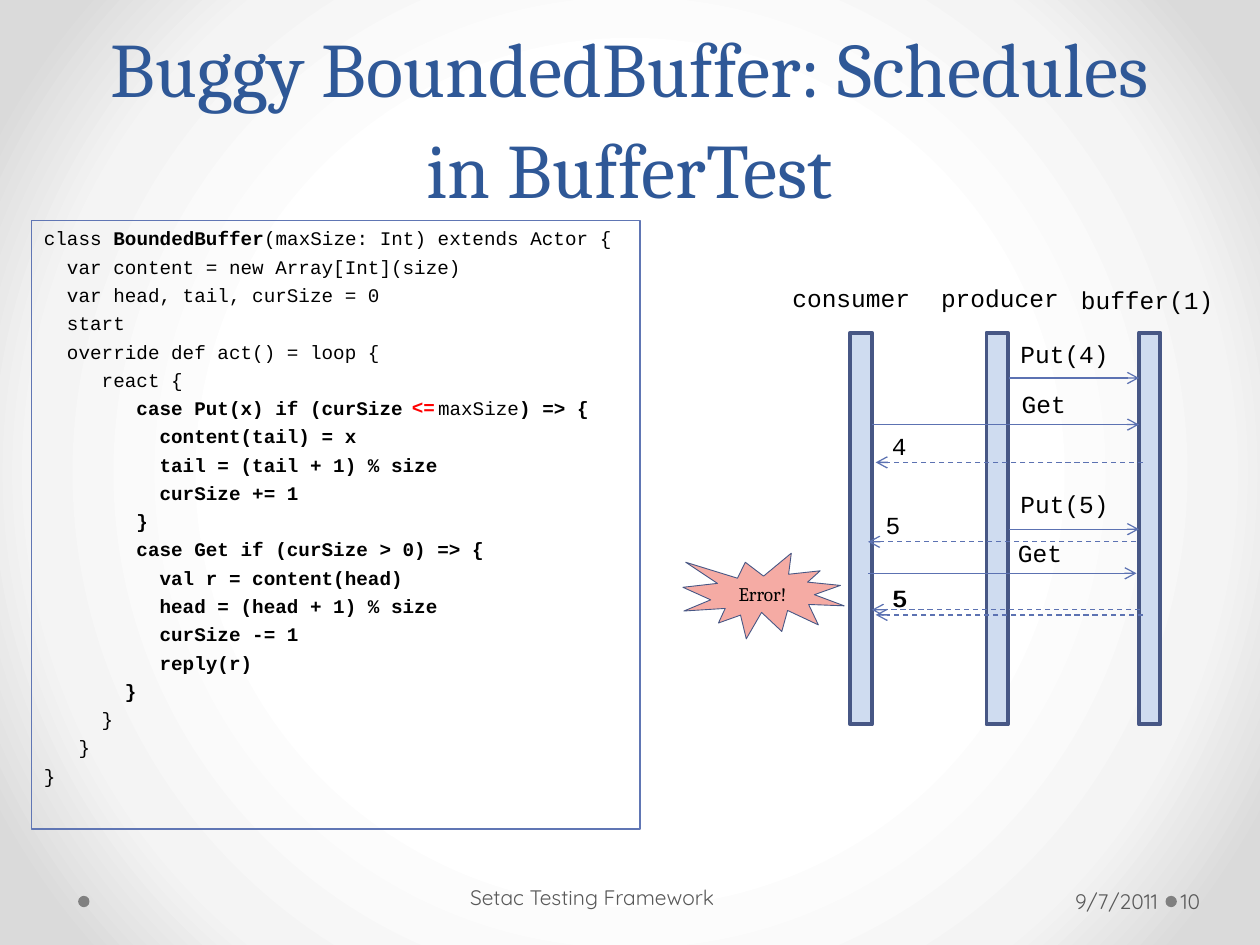
from dataclasses import dataclass

from lxml import etree
from pptx import Presentation
from pptx import util as u
from pptx.dml.color import RGBColor
from pptx.enum import dml, shapes, text
from pptx.oxml import parse_xml
from pptx.oxml.ns import nsdecls, qn

EMU_PER_PX = 9144  # 100 px to the inch


@dataclass(frozen=True)
class Theme:
    serif: str = "Cambria"
    mono: str = "Courier New"
    sans: str = "Quicksand"
    title: str = "2F5897"
    ink: str = "000000"
    alert: str = "FF0000"
    muted: str = "595959"
    dot: str = "808080"
    frame: str = "6076B4"
    bar: str = "CFDCF0"
    edge: str = "475785"
    arrow: str = "5C72B2"
    burst: str = "EF796D"
    backdrop: tuple = ((50, "FFFFFF"), (76, "F4F4F4"), (92, "DADADA"))
    title_pt: int = 44
    label_pt: int = 14
    footer_pt: int = 12
    code_pt: int = 11


THEME = Theme()

# A backtick switches bold on or off, across lines too
CODE = """class `BoundedBuffer`(maxSize: Int) extends Actor {
  var content = new Array[Int](size)
  var head, tail, curSize = 0
  start
  override def act() = loop {
     react {
`        case Put(x) if (curSize   `maxSize`) => {
          content(tail) = x
          tail = (tail + 1) % size
          curSize += 1
        }
        case Get if (curSize > 0) => {
          val r = content(head)
          head = (head + 1) % size
          curSize -= 1
          reply(r)
       }`
     }
   }
}"""


def px(n):
    return u.Emu(n * EMU_PER_PX)


def rgb(color):
    return RGBColor.from_string(color)


def write(sp, content, *, font=THEME.mono, size=THEME.label_pt, color=THEME.ink,
          align="LEFT", anchor="TOP", insets=(10, 5, 10, 5), before=0, leading=None):
    """Fill a shape with text, one paragraph a line."""
    tf = sp.text_frame
    tf.word_wrap = True
    tf.auto_size = text.MSO_AUTO_SIZE.NONE
    tf.vertical_anchor = text.MSO_ANCHOR[anchor]
    tf.margin_left, tf.margin_top, tf.margin_right, tf.margin_bottom = map(px, insets)
    bold = False
    for i, line in enumerate(content.split("\n")):
        p = tf.add_paragraph() if i else tf.paragraphs[0]
        p.alignment = text.PP_ALIGN[align]
        if i and before:
            p.space_before = u.Pt(before)
        if leading:
            p.line_spacing = u.Pt(leading)
        for j, part in enumerate(line.split("`")):
            if j:
                bold = not bold
            if part:
                r = p.add_run()
                r.text = part
                r.font.name, r.font.size, r.font.bold = font, u.Pt(size), bold
                r.font.color.rgb = rgb(color)


class Deck:
    def __init__(self, theme, width, height):
        self.theme = theme
        self.prs = Presentation()
        self.prs.slide_width, self.prs.slide_height = px(width), px(height)
        self.s = None

    def new_slide(self):
        self.s = self.prs.slides.add_slide(self.prs.slide_layouts[5])

    def background(self):
        """Radial gradient from the centre outwards."""
        self.s.background.fill.solid()
        stops = "".join(f'<a:gs pos="{pos * 1000}"><a:srgbClr val="{color}"/></a:gs>'
                        for pos, color in self.theme.backdrop)
        solid = next(self.s._element.iter(qn("a:solidFill")))
        solid.getparent().replace(solid, parse_xml(
            f'<a:gradFill {nsdecls("a")} rotWithShape="1"><a:gsLst>{stops}</a:gsLst>'
            '<a:path path="circle"><a:fillToRect l="50000" t="50000" r="50000" b="50000"/>'
            '</a:path></a:gradFill>'))

    def title(self, content, x, y, w, h):
        sp = self.s.shapes.title
        sp.left, sp.top, sp.width, sp.height = map(px, (x, y, w, h))
        write(sp, content, font=self.theme.serif, size=self.theme.title_pt,
              color=self.theme.title, align="CENTER", anchor="BOTTOM", leading=58)

    def label(self, content, x, y, w=128, h=34, **style):
        sp = self.s.shapes.add_textbox(*map(px, (x, y, w, h)))
        write(sp, content, **style)
        return sp

    def shape(self, kind, x, y, w, h, fill, edge=None, weight=1.0, opacity=None):
        sp = self.s.shapes.add_shape(shapes.MSO_SHAPE[kind], *map(px, (x, y, w, h)))
        sp.shadow.inherit = False
        sp.fill.solid()
        sp.fill.fore_color.rgb = rgb(fill)
        if opacity:
            clr = sp._element.spPr.find(qn("a:solidFill"))[0]
            etree.SubElement(clr, qn("a:alpha"), val=str(opacity * 1000))
        if edge:
            sp.line.color.rgb = rgb(edge)
            sp.line.width = u.Pt(weight)
        else:
            sp.line.fill.background()
        return sp

    def arrow(self, x1, x2, y, dashed=False):
        c = self.s.shapes.add_connector(shapes.MSO_CONNECTOR.STRAIGHT,
                                        *map(px, (x1, y, x2, y)))
        c.line.color.rgb = rgb(self.theme.arrow)
        c.line.width = u.Pt(0.75)
        if dashed:
            c.line.dash_style = dml.MSO_LINE.DASH
        etree.SubElement(c.line._get_or_add_ln(), qn("a:tailEnd"), type="arrow")
        etree.SubElement(c._element.spPr, qn("a:effectLst"))

    def footer(self, content, x, y, w, align, insets):
        self.label(content, x, y, w, 40, font=self.theme.sans,
                   size=self.theme.footer_pt, color=self.theme.muted,
                   align=align, anchor="MIDDLE", insets=insets)


def main():
    t = THEME
    deck = Deck(t, 1000, 750)
    deck.new_slide()
    deck.background()
    deck.title("Buggy BoundedBuffer: Schedules in BufferTest", 50, 0, 900, 175)

    # Code listing with the faulty operator marked
    listing = deck.label(CODE, 25, 175, 483, 483, size=t.code_pt, before=2.94)
    listing.line.color.rgb = rgb(t.frame)
    listing.line.width = u.Pt(0.75)
    deck.label("`<=", 317, 309, 42, 29, size=t.code_pt, color=t.alert)

    # Footer
    for x in (62, 925):
        deck.shape("OVAL", x, 711, 9, 9, t.dot)
    deck.footer("9/7/2011", 696, 695, 228, "RIGHT", (10, 5, 5, 5))
    deck.footer("Setac Testing Framework", 317, 692, 311, "CENTER", (5, 5, 10, 5))
    deck.footer("10", 934, 695, 61, "LEFT", (3, 5, 5, 5))

    # Lifelines: name, label left, label top, bar left
    for name, x, y, bar_x in (("consumer", 619, 220, 675),
                              ("producer", 737, 220, 783),
                              ("buffer(1)", 848, 221, 904)):
        deck.shape("RECTANGLE", bar_x, 264, 17, 311, t.bar, t.edge, 2.25)
        deck.label(name, x, y)

    # Messages: text, label left, label top, arrow from, to, height
    for name, x, y, x1, x2, arrow_y in (("Put(4)", 800, 264, 801, 904, 300),
                                        ("Get", 801, 304, 692, 904, 337),
                                        ("4", 698, 337, 907, 695, 367),
                                        ("Put(5)", 800, 383, 801, 904, 420),
                                        ("5", 693, 400, 902, 689, 430),
                                        ("Get", 798, 422, 689, 902, 455),
                                        ("5", 699, 458, 905, 692, 484),
                                        ("5", 698, 458, 907, 695, 488)):
        deck.arrow(x1, x2, arrow_y, dashed=x2 < x1)  # replies run leftwards
        deck.label(name, x, y)

    # Error burst
    burst = deck.shape("EXPLOSION1", 542, 439, 128, 68, t.burst, t.edge, 0.5, opacity=62)
    write(burst, "Error!", font=t.serif, size=t.code_pt, align="CENTER", anchor="MIDDLE")

    deck.prs.save("out.pptx")


if __name__ == "__main__":
    main()
